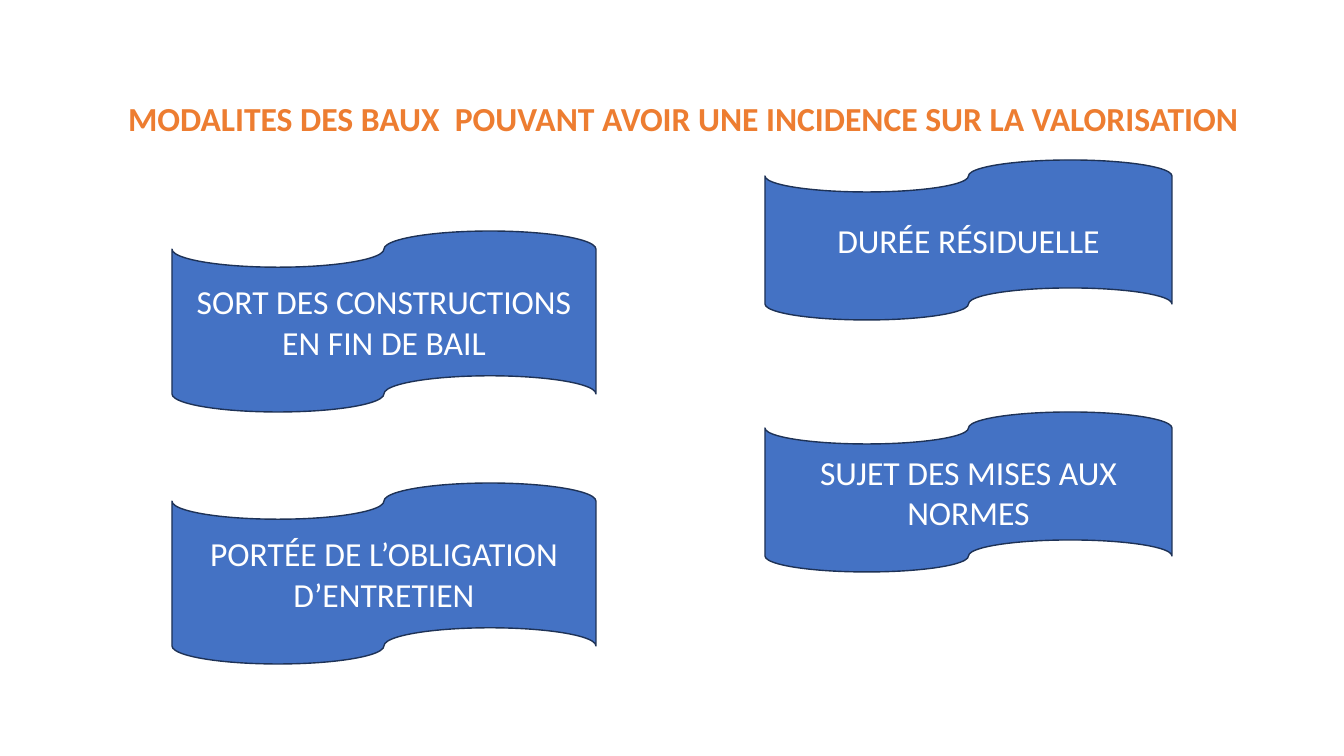
from pptx import Presentation
from pptx.dml.color import RGBColor
from pptx.enum.shapes import MSO_SHAPE
from pptx.enum.text import MSO_ANCHOR, MSO_AUTO_SIZE, PP_ALIGN
from pptx.util import Pt

PX = 914400 / 100.8
ORANGE = RGBColor(0xED, 0x7D, 0x31)
BLUE = RGBColor(0x44, 0x72, 0xC4)
NAVY = RGBColor(0x1E, 0x32, 0x56)
WHITE = RGBColor(0xFF, 0xFF, 0xFF)

ROW_STEP = 252
# left, top of first banner, width, height, labels from top to bottom
COLUMNS = [
    (172, 231, 424, 181, ["SORT DES CONSTRUCTIONS EN FIN DE BAIL",
                          "PORTÉE DE L’OBLIGATION D’ENTRETIEN"]),
    (765, 160, 407, 160, ["DURÉE RÉSIDUELLE", "SUJET DES MISES AUX NORMES"]),
]


def px(*lengths):
    return [round(length * PX) for length in lengths]


def write(box, text, color, alignment, anchor, bold=False):
    frame = box.text_frame
    frame.word_wrap = True
    frame.auto_size = MSO_AUTO_SIZE.NONE
    frame.vertical_anchor = anchor
    para = frame.paragraphs[0]
    para.alignment = alignment
    span = para.add_run()
    span.text = text
    span.font.name = "Calibri"
    span.font.size = Pt(24)
    span.font.bold = bold
    span.font.color.rgb = color


deck = Presentation()
deck.slide_width, deck.slide_height = px(1344, 756)
page = deck.slides.add_slide(deck.slide_layouts[5])

title = page.shapes.title
title.left, title.top, title.width, title.height = px(118, 93, 1202, 50)
write(title, "MODALITES DES BAUX  POUVANT AVOIR UNE INCIDENCE SUR LA VALORISATION",
      ORANGE, PP_ALIGN.LEFT, MSO_ANCHOR.TOP, bold=True)

for left, first_top, width, height, labels in COLUMNS:
    for row, label in enumerate(labels):
        top = first_top + row * ROW_STEP
        banner = page.shapes.add_shape(MSO_SHAPE.FLOWCHART_PUNCHED_TAPE,
                                       *px(left, top, width, height))
        banner.shadow.inherit = False
        banner.fill.solid()
        banner.fill.fore_color.rgb = BLUE
        banner.line.color.rgb = NAVY
        banner.line.width = Pt(1)
        write(banner, label, WHITE, PP_ALIGN.CENTER, MSO_ANCHOR.MIDDLE)

deck.save("out.pptx")
